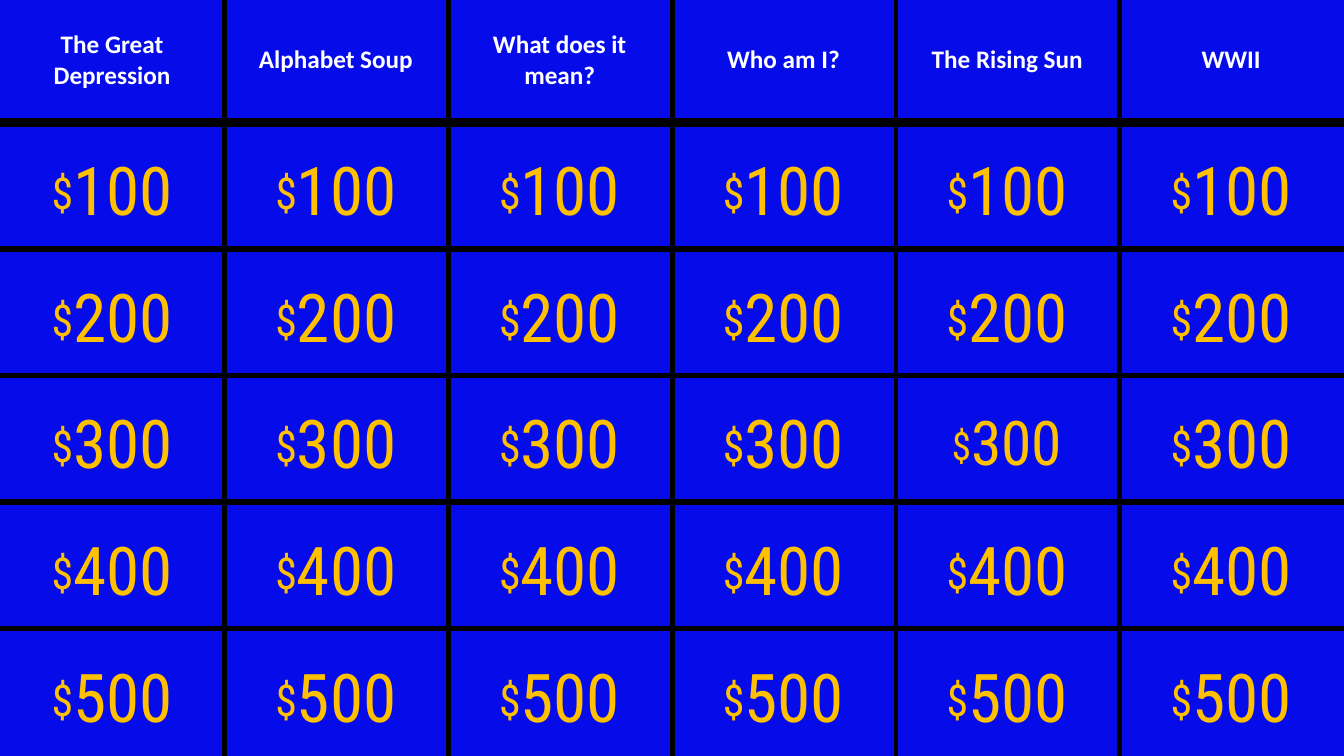
from dataclasses import dataclass

from lxml import etree
from pptx import Presentation
from pptx.dml.color import RGBColor
from pptx.enum.shapes import MSO_CONNECTOR, MSO_SHAPE
from pptx.enum.text import MSO_ANCHOR, PP_ALIGN
from pptx.oxml.ns import qn
from pptx.util import Cm, Pt

RECTANGLE = MSO_SHAPE.RECTANGLE
STRAIGHT = MSO_CONNECTOR.STRAIGHT
MIDDLE = MSO_ANCHOR.MIDDLE
CENTER = PP_ALIGN.CENTER


@dataclass(frozen=True)
class Theme:
    board: RGBColor = RGBColor(0x06, 0x0C, 0xE9)
    gold: RGBColor = RGBColor(0xFF, 0xC0, 0x00)
    white: RGBColor = RGBColor(0xFF, 0xFF, 0xFF)
    black: RGBColor = RGBColor(0x00, 0x00, 0x00)
    category_font: str = "Calibri"
    value_font: str = "Roboto Condensed"
    category_size: Pt = Pt(18)
    dollar_size: Pt = Pt(54)
    value_size: Pt = Pt(48)
    small_dollar_size: Pt = Pt(48)
    small_value_size: Pt = Pt(44)
    header_rule: Pt = Pt(6.5)
    row_rule: Pt = Pt(4)
    column_rule: Pt = Pt(3.5)


theme = Theme()
categories = ["The Great Depression", "Alphabet Soup", "What does it mean?",
              "Who am I?", "The Rising Sun", "WWII"]
values = [100, 200, 300, 400, 500]
small_cell = ("The Rising Sun", 300)

# Board grid, in centimetres
LEFT, TOP = 0.02, -0.11
COLUMN_STEP, ROW_STEP = 5.64, 3.19
CELL_WIDTH = 5.61

presentation = Presentation()
presentation.slide_width = Cm(33.87)
presentation.slide_height = Cm(19.05)
slide = presentation.slides.add_slide(presentation.slide_layouts[6])
slide.background.fill.solid()
slide.background.fill.fore_color.rgb = theme.board


def add_cell(column, row, font_name, color):
    """Add a board cell and return its centred paragraph."""
    cell = slide.shapes.add_shape(
        RECTANGLE, Cm(LEFT + column * COLUMN_STEP), Cm(TOP + row * ROW_STEP),
        Cm(CELL_WIDTH), Cm(ROW_STEP))
    cell.shadow.inherit = False
    cell.fill.solid()
    cell.fill.fore_color.rgb = theme.board
    cell.line.fill.background()
    cell.text_frame.word_wrap = True
    cell.text_frame.vertical_anchor = MIDDLE
    paragraph = cell.text_frame.paragraphs[0]
    paragraph.alignment = CENTER
    paragraph.font.name = font_name
    paragraph.font.color.rgb = color
    return paragraph


def add_rule(x1, y1, x2, y2, width):
    """Add a black dividing line."""
    rule = slide.shapes.add_connector(STRAIGHT, Cm(x1), Cm(y1), Cm(x2), Cm(y2))
    rule.line.color.rgb = theme.black
    rule.line.width = width
    etree.SubElement(rule._element.spPr, qn("a:effectLst"))


# Categories and their dollar values
for column, category in enumerate(categories):
    paragraph = add_cell(column, 0, theme.category_font, theme.white)
    paragraph.font.size = theme.category_size
    paragraph.font.bold = True
    paragraph.add_run().text = category

    for row, value in enumerate(values, start=1):
        paragraph = add_cell(column, row, theme.value_font, theme.gold)
        is_small = (category, value) == small_cell
        dollar = paragraph.add_run()
        dollar.text = "$"
        dollar.font.size = theme.small_dollar_size if is_small else theme.dollar_size
        dollar.font._element.set("baseline", "8000")
        amount = paragraph.add_run()
        amount.text = str(value)
        amount.font.size = theme.small_value_size if is_small else theme.value_size

# Row rules, the heavier one under the categories
for row in range(1, len(values) + 1):
    y = TOP + row * ROW_STEP
    add_rule(0, y, 34.06, y, theme.header_rule if row == 1 else theme.row_rule)

# Column rules
for column in range(1, len(categories)):
    x = LEFT + column * COLUMN_STEP
    add_rule(x, TOP, x, 19.35, theme.column_rule)

presentation.save("out.pptx")
